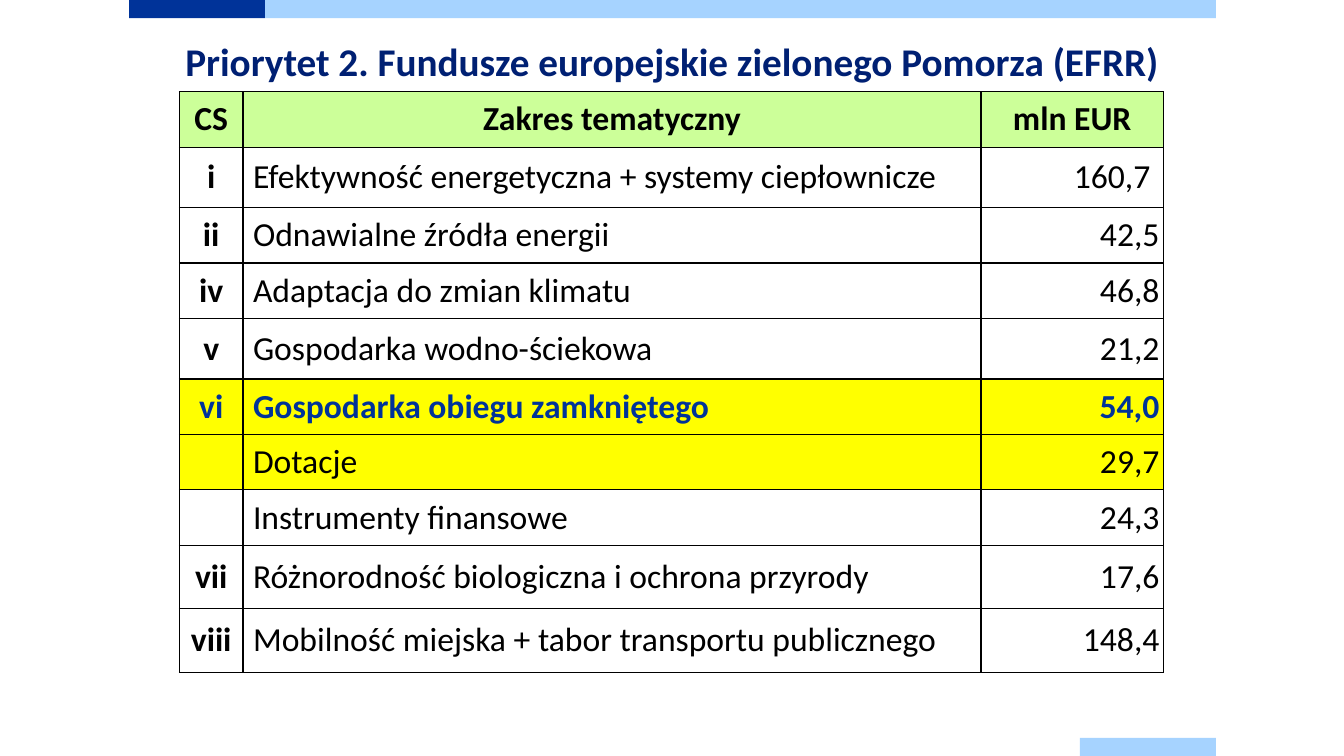
from dataclasses import dataclass
from typing import Optional

from lxml import etree
from pptx import Presentation
from pptx.dml.color import RGBColor
from pptx.enum.shapes import MSO_SHAPE
from pptx.enum.text import MSO_ANCHOR, PP_ALIGN
from pptx.oxml.ns import qn
from pptx.util import Inches, Pt

RECTANGLE = MSO_SHAPE.RECTANGLE
MIDDLE = MSO_ANCHOR.MIDDLE
LEFT, CENTER, RIGHT = PP_ALIGN.LEFT, PP_ALIGN.CENTER, PP_ALIGN.RIGHT

NAVY = RGBColor(0x00, 0x20, 0x73)
BLUE = RGBColor(0x00, 0x33, 0x99)
SKY = RGBColor(0xA6, 0xD3, 0xFF)
GREEN = RGBColor(0xCC, 0xFF, 0x99)
YELLOW = RGBColor(0xFF, 0xFF, 0x00)
BLACK = RGBColor(0x00, 0x00, 0x00)

FONT = "Calibri"
BAR_HEIGHT = 0.18
COLUMN_WIDTHS = (0.63, 7.32, 1.81)
BODY_ALIGNMENTS = (CENTER, LEFT, RIGHT)
BODY_MARGINS = ((0.1, 0.1), (0.1, 0), (0, 0.04))
HEADER_MARGINS = ((0.1, 0.1), (0, 0), (0, 0))


@dataclass(frozen=True)
class Bar:
    left: float
    top: float
    width: float
    color: RGBColor


@dataclass(frozen=True)
class Row:
    code: str
    topic: str
    amount: str
    height: float = 0.55
    fill: Optional[RGBColor] = None
    color: RGBColor = BLACK
    bold: bool = False
    header: bool = False
    amount_margin: float = 0.04


BARS = (
    Bar(1.28, 0, 1.35, BLUE),
    Bar(2.63, 0, 9.43, SKY),
    Bar(10.71, 7.32, 1.35, SKY),
)

ROWS = (
    Row("CS", "Zakres tematyczny", "mln EUR", fill=GREEN, bold=True, header=True),
    Row("i", "Efektywność energetyczna + systemy ciepłownicze", "160,7", 0.6,
        amount_margin=0.13),
    Row("ii", "Odnawialne źródła energii", "42,5"),
    Row("iv", "Adaptacja do zmian klimatu", "46,8"),
    Row("v", "Gospodarka wodno-ściekowa", "21,2", 0.6),
    Row("vi", "Gospodarka obiegu zamkniętego", "54,0", fill=YELLOW, color=BLUE, bold=True),
    Row("", "Dotacje", "29,7", fill=YELLOW),
    Row("", "Instrumenty finansowe", "24,3"),
    Row("vii", "Różnorodność biologiczna i ochrona przyrody", "17,6", 0.63),
    Row("viii", "Mobilność miejska + tabor transportu publicznego", "148,4", 0.63),
)


def write(para, text: str, size: float, color: RGBColor, bold: bool) -> None:
    span = para.add_run()
    span.text = text
    formats = {"name": FONT, "size": Pt(size), "bold": bold}
    for name, value in formats.items():
        setattr(span.font, name, value)
    span.font.color.rgb = color


def draw_bar(page, bar: Bar) -> None:
    shape = page.shapes.add_shape(
        RECTANGLE, Inches(bar.left), Inches(bar.top), Inches(bar.width), Inches(BAR_HEIGHT))
    shape.shadow.inherit = False
    shape.fill.solid()
    shape.fill.fore_color.rgb = bar.color
    shape.line.fill.background()


def draw_title(page) -> None:
    box = page.shapes.add_textbox(Inches(1.74), Inches(0.29), Inches(9.92), Inches(0.62))
    frame = box.text_frame
    frame.word_wrap = True
    frame.vertical_anchor = MIDDLE
    write(frame.paragraphs[0], "Priorytet 2. Fundusze europejskie zielonego Pomorza (EFRR)",
          28, NAVY, True)


def draw_borders(cell) -> None:
    properties = cell._tc.get_or_add_tcPr()
    for side in ("a:lnL", "a:lnR", "a:lnT", "a:lnB"):
        line = etree.SubElement(properties, qn(side), w=str(Pt(1)))
        fill = etree.SubElement(line, qn("a:solidFill"))
        etree.SubElement(fill, qn("a:srgbClr"), val=str(BLACK))


def fill_cell(cell, row: Row, column: int) -> None:
    draw_borders(cell)
    if row.fill is None:
        cell.fill.background()
    else:
        cell.fill.solid()
        cell.fill.fore_color.rgb = row.fill
    left, right = (HEADER_MARGINS if row.header else BODY_MARGINS)[column]
    if column == 2 and not row.header:
        right = row.amount_margin
    vertical = 0.05 if column == 0 else 0
    formats = {
        "vertical_anchor": MIDDLE,
        "margin_left": Inches(left),
        "margin_right": Inches(right),
        "margin_top": Inches(vertical),
        "margin_bottom": Inches(vertical),
    }
    for name, value in formats.items():
        setattr(cell, name, value)
    text = (row.code, row.topic, row.amount)[column]
    if text:
        para = cell.text_frame.paragraphs[0]
        para.alignment = CENTER if row.header else BODY_ALIGNMENTS[column]
        write(para, text, 24, row.color, row.bold or column == 0)


def draw_table(page) -> None:
    table = page.shapes.add_table(
        len(ROWS), len(COLUMN_WIDTHS), Inches(1.78), Inches(0.91),
        Inches(sum(COLUMN_WIDTHS)), Inches(sum(row.height for row in ROWS))).table
    table.first_row = False
    table.horz_banding = False
    for column, width in zip(table.columns, COLUMN_WIDTHS):
        column.width = Inches(width)
    for index, row in enumerate(ROWS):
        table.rows[index].height = Inches(row.height)
        for column in range(len(COLUMN_WIDTHS)):
            fill_cell(table.cell(index, column), row, column)


def main() -> None:
    deck = Presentation()
    deck.slide_width = Inches(13.33)
    deck.slide_height = Inches(7.5)
    page = deck.slides.add_slide(deck.slide_layouts[6])
    for bar in BARS:
        draw_bar(page, bar)
    draw_title(page)
    draw_table(page)
    deck.save("out.pptx")


if __name__ == "__main__":
    main()
